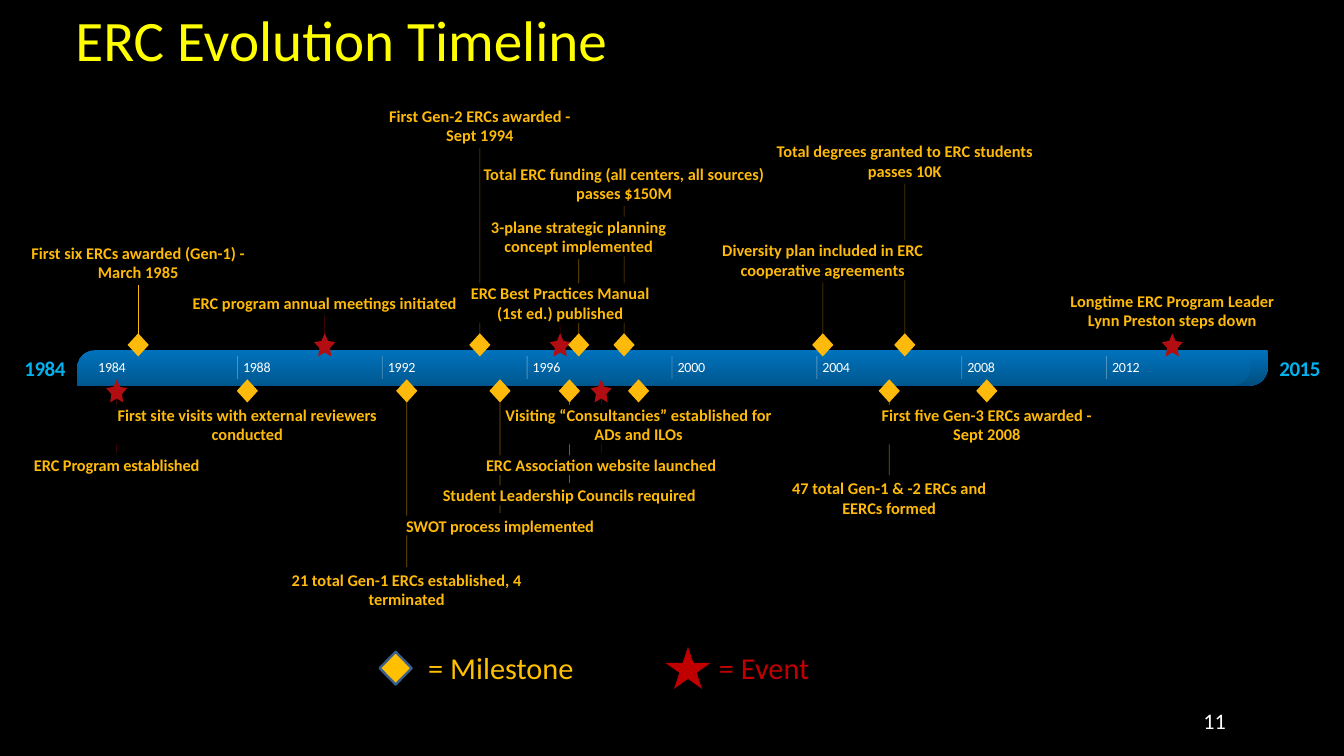
"""Builds the ERC evolution timeline slide."""
from typing import NamedTuple

from lxml import etree
from pptx import Presentation
from pptx.dml.color import RGBColor
from pptx.enum.shapes import MSO_CONNECTOR, MSO_SHAPE
from pptx.enum.text import MSO_ANCHOR, PP_ALIGN
from pptx.oxml.ns import qn
from pptx.util import Cm, Pt

DIAMOND, STAR = MSO_SHAPE.DIAMOND, MSO_SHAPE.STAR_5_POINT
BAND = MSO_SHAPE.ROUND_2_DIAG_RECTANGLE
STRAIGHT = MSO_CONNECTOR.STRAIGHT
LEFT, CENTER = PP_ALIGN.LEFT, PP_ALIGN.CENTER
TOP, MIDDLE = MSO_ANCHOR.TOP, MSO_ANCHOR.MIDDLE

BLACK = RGBColor(0x00, 0x00, 0x00)
WHITE = RGBColor(0xFF, 0xFF, 0xFF)
YELLOW = RGBColor(0xFF, 0xFF, 0x00)
AMBER = RGBColor(0xFE, 0xBA, 0x0A)
RED = RGBColor(0xB2, 0x0E, 0x12)
SKY = RGBColor(0x02, 0xB2, 0xEE)
BLUE = RGBColor(0x00, 0x72, 0xBC)
DEEP_BLUE = RGBColor(0x00, 0x4E, 0x7F)
LEGEND_GOLD = RGBColor(0xFF, 0xC0, 0x00)
LEGEND_RED = RGBColor(0xC0, 0x00, 0x00)
LEGEND_EDGE = RGBColor(0x3A, 0x5F, 0x8C)

ROW_HEIGHT = 0.6
MARKER_WIDTH, MARKER_HEIGHT = 0.64, 0.7
MARKER_OFFSET = 0.16
STEM_GAP = 0.08
SHORTEST_STEM = 0.5
FIRST_TICK, TICK_STEP = 4.84, 4.38


class Entry(NamedTuple):
    """A dated entry, placed in cm from the band's top left corner."""
    text: str
    marker: int
    x: float
    top: float
    width: float
    rows: int = 2
    spacing: float = 0
    stem_opacity: int = 50

    @property
    def bottom(self):
        """Lower edge of the label."""
        return self.top + self.rows * ROW_HEIGHT

    @property
    def color(self):
        """Colour of the marker and its stem."""
        return RED if self.marker == STAR else AMBER

    def covers(self, x):
        """Tell whether the label lies across a vertical at x."""
        return abs(x - self.x) <= self.width / 2


ABOVE = [
    Entry("First six ERCs awarded (Gen-1) - March 1985", DIAMOND, 1.84, -3.25, 6.55, stem_opacity=100),
    Entry("ERC program annual meetings initiated", STAR, 7.48, -1.73, 8.2, 1),
    Entry("First Gen-2 ERCs awarded - Sept 1994", DIAMOND, 12.17, -7.39, 5.61),
    Entry("ERC Best Practices Manual (1st ed.) published", STAR, 14.6, -2.03, 5.51),
    Entry("3-plane strategic planning concept implemented", DIAMOND, 15.16, -4.04, 5.44),
    Entry("Total ERC funding (all centers, all sources) passes $150M", DIAMOND, 16.53, -5.64, 8.61),
    Entry("Diversity plan included in ERC cooperative agreements", DIAMOND, 22.54, -3.33, 6.2),
    Entry("Total degrees granted to ERC students passes 10K", DIAMOND, 25.02, -6.32, 7.87),
    Entry("Longtime ERC Program Leader Lynn Preston steps down", STAR, 33.11, -1.8, 6.27),
]
BELOW = [
    Entry("ERC Program established", STAR, 1.19, 3.18, 5.2, 1, -0.1),
    Entry("First site visits with external reviewers conducted", DIAMOND, 5.14, 1.65, 7.92),
    Entry("21 total Gen-1 ERCs established, 4 terminated", DIAMOND, 9.96, 6.63, 7.06),
    Entry("SWOT process implemented", DIAMOND, 12.78, 5, 5.9, 1, -0.1),
    Entry("Student Leadership Councils required", DIAMOND, 14.88, 4.09, 7.85, 1),
    Entry("ERC Association website launched", STAR, 15.84, 3.18, 7.15, 1),
    Entry("Visiting “Consultancies” established for ADs and ILOs", DIAMOND, 16.97, 1.65, 8.15),
    Entry("47 total Gen-1 & -2 ERCs and EERCs formed", DIAMOND, 24.55, 3.86, 5.99),
    Entry("First five Gen-3 ERCs awarded - Sept 2008", DIAMOND, 27.5, 1.65, 6.45),
]


def add_text(slide, text, box, *, size, color, bold=False, align=LEFT, anchor=MIDDLE,
             padding=(0, 0), spacing=0):
    """Add a one-run text box; padding is (horizontal, vertical) in cm."""
    frame = slide.shapes.add_textbox(*map(Cm, box)).text_frame
    frame.word_wrap = True
    frame.vertical_anchor = anchor
    frame.margin_left = frame.margin_right = Cm(padding[0])
    frame.margin_top = frame.margin_bottom = Cm(padding[1])
    paragraph = frame.paragraphs[0]
    paragraph.alignment = align
    run = paragraph.add_run()
    run.text = text
    run.font.name, run.font.size, run.font.bold = "Calibri", Pt(size), bold
    run.font.color.rgb = color
    if spacing:
        run._r.get_or_add_rPr().set("spc", str(round(spacing * 100)))


def set_opacity(item, percent):
    """Make the solid colours of a shape or connector translucent."""
    for color in item._element.spPr.iter(qn("a:srgbClr")):
        etree.SubElement(color, qn("a:alpha")).set("val", str(percent * 1000))


def add_filled(slide, preset, box, color):
    """Add a borderless preset shape."""
    shape = slide.shapes.add_shape(preset, *map(Cm, box))
    shape.shadow.inherit = False
    shape.fill.solid()
    shape.fill.fore_color.rgb = color
    shape.line.fill.background()
    return shape


def add_vertical(slide, x, start, end, color, width, opacity):
    """Add a thin vertical line."""
    line = slide.shapes.add_connector(STRAIGHT, Cm(x), Cm(start), Cm(x), Cm(end))
    line.line.color.rgb = color
    line.line.width = Pt(width)
    set_opacity(line, opacity)
    etree.SubElement(line._element.spPr, qn("a:effectLst"))


def add_stem(slide, box, entry, neighbours, marker_y):
    """Draw a stem from label to marker, broken where other labels cross it."""
    left, top = box[:2]
    start, end = ((entry.bottom + STEM_GAP, marker_y) if entry.top < 0
                  else (marker_y, entry.top - STEM_GAP))
    if end - start < SHORTEST_STEM:
        return
    crossing = sorted((other.top, other.bottom) for other in neighbours
                      if start < other.top < end and other.covers(entry.x))
    starts = [start] + [bottom for _, bottom in crossing]
    ends = [upper for upper, _ in crossing] + [end]
    for upper, lower in zip(starts, ends):
        add_vertical(slide, left + entry.x, top + upper, top + lower,
                     entry.color, 0.5, entry.stem_opacity)


def add_band(slide, box):
    """Draw the time band with its year scale and end years."""
    left, top, width, height = box
    base = add_filled(slide, BAND, box, BLUE)
    base.fill.gradient()
    base.fill.gradient_angle = 270
    for stop, color in zip(base.fill.gradient_stops, (BLUE, DEEP_BLUE)):
        stop.color.rgb = color
    elapsed = add_filled(slide, BAND, (left, top, width - 0.53, height), BLUE)
    set_opacity(elapsed, 30)
    for band in (base, elapsed):
        band.adjustments[0], band.adjustments[1] = 0.5, 0
    for index, year in enumerate(range(1984, 2013, 4)):
        x = left + FIRST_TICK + (index - 1) * TICK_STEP
        if index:
            add_vertical(slide, x, top + 0.18, top + 0.87, WHITE, 0.75, 30)
        add_text(slide, str(year), (x + 0.17, top + 0.26, 0.9, 0.51),
                 size=12, color=WHITE, spacing=-0.2)
    for year, x in (("1984", left - 1.63), ("2015", left + width + 0.33)):
        add_text(slide, year, (x, top + 0.14, 1.3, 0.78), size=18, color=SKY,
                 bold=True, align=CENTER, spacing=-0.4)


def add_timeline(slide, box):
    """Draw stems, band, labels and markers around the band's box."""
    left, top, _, height = box
    sides = ((ABOVE, -MARKER_OFFSET), (BELOW, height + MARKER_OFFSET))
    for entries, marker_y in sides:
        for entry in entries:
            add_stem(slide, box, entry, entries, marker_y)
    add_band(slide, box)
    for entries, marker_y in sides:
        for entry in entries:
            x = left + entry.x
            add_text(slide, entry.text,
                     (x - entry.width / 2, top + entry.top, entry.width, entry.rows * ROW_HEIGHT),
                     size=14, color=AMBER, bold=True, align=CENTER, spacing=entry.spacing)
            marker = add_filled(slide, entry.marker,
                                (x - MARKER_WIDTH / 2, top + marker_y - MARKER_HEIGHT / 2,
                                 MARKER_WIDTH, MARKER_HEIGHT), entry.color)
            if entry.marker == STAR:
                marker.adjustments[0] = 0.25


def add_legend(slide, box):
    """Explain the two marker types."""
    left, top, _, height = box
    milestone = add_filled(slide, DIAMOND, (left, top + 0.2, 0.97, 0.99), LEGEND_GOLD)
    milestone.line.color.rgb = LEGEND_EDGE
    milestone.line.width = Pt(2)
    add_filled(slide, STAR, (left + 8.64, top + 0.05, 1.37, 1.27), LEGEND_RED)
    for text, offset, color in (("= Milestone", 1.22, LEGEND_GOLD), ("= Event", 10.01, LEGEND_RED)):
        add_text(slide, text, (left + offset, top, 5.56, height), size=26,
                 color=color, anchor=TOP, padding=(0.25, 0.13))


def main():
    """Build and save the slide."""
    deck = Presentation()
    deck.slide_width, deck.slide_height = Cm(40.64), Cm(22.86)
    slide = deck.slides.add_slide(deck.slide_layouts[6])
    slide.background.fill.solid()
    slide.background.fill.fore_color.rgb = BLACK
    add_timeline(slide, (2.34, 10.59, 35.99, 1.07))
    add_text(slide, "ERC Evolution Timeline", (2.03, 0, 36.58, 3.81), size=49,
             color=YELLOW, anchor=TOP, padding=(0.25, 0.13))
    add_legend(slide, (11.48, 19.51, 15.57, 1.37))
    add_text(slide, "11", (35.56, 21.18, 2.34, 1.22), size=19, color=WHITE,
             align=CENTER, padding=(0.25, 0.13))
    deck.save("out.pptx")


if __name__ == "__main__":
    main()
